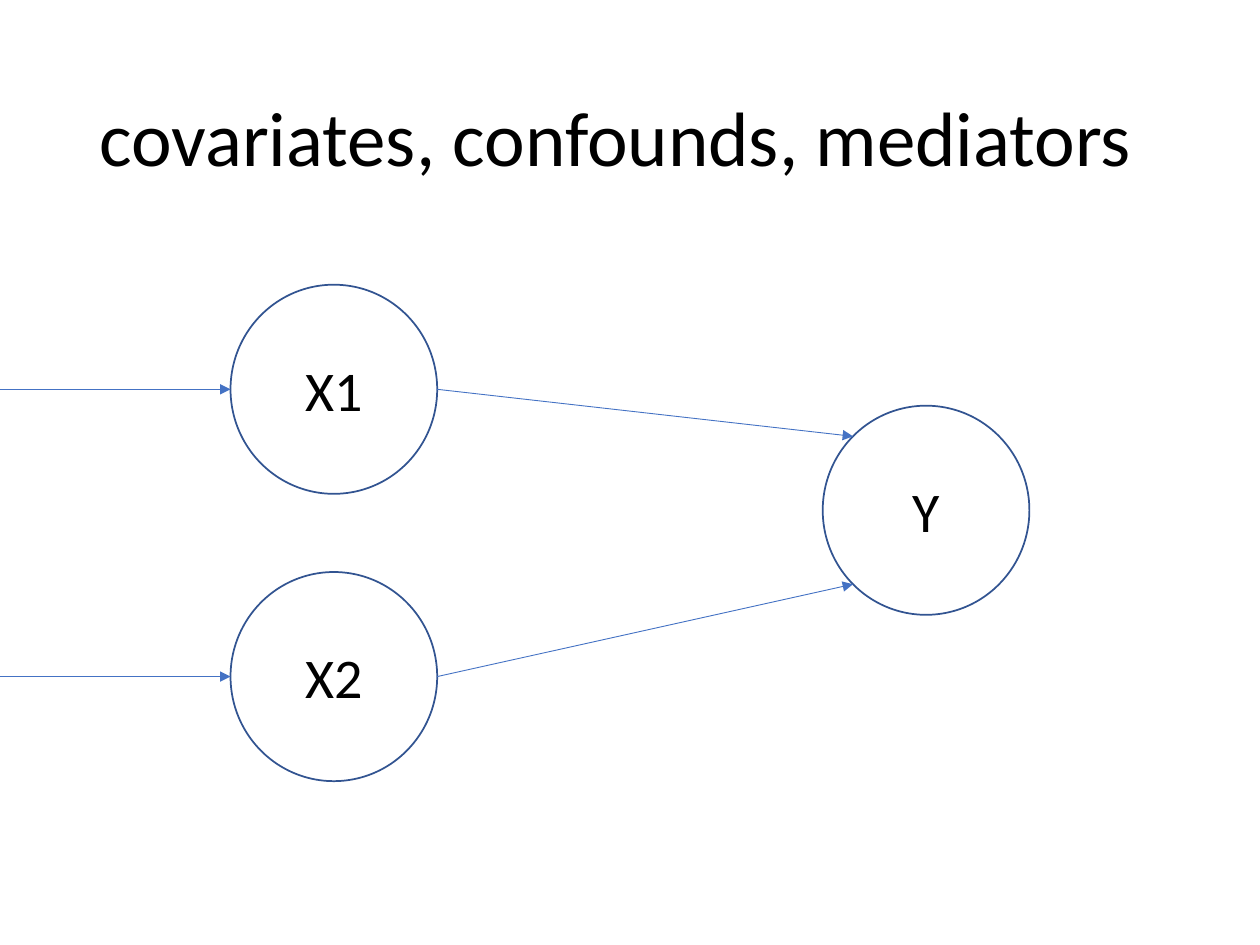
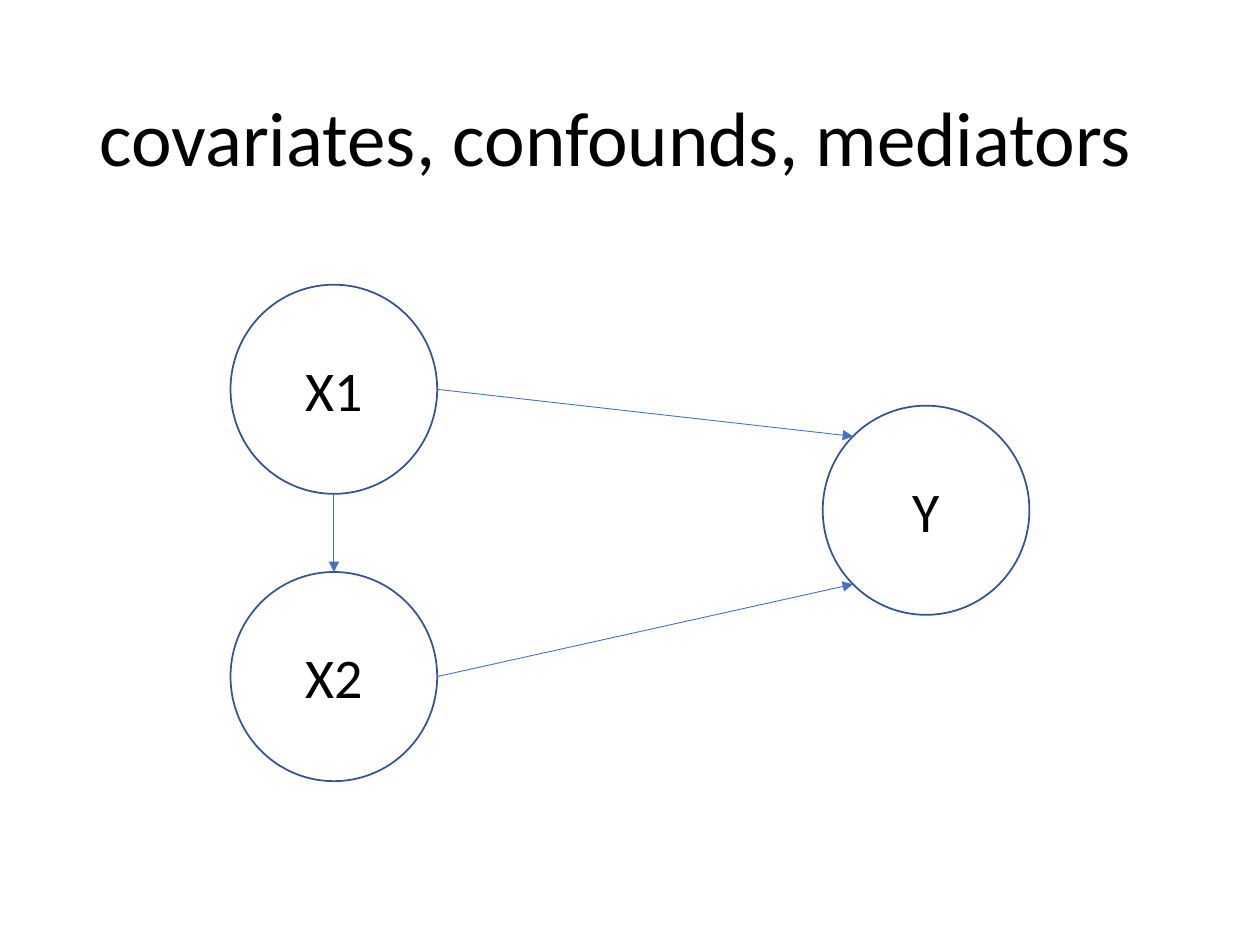
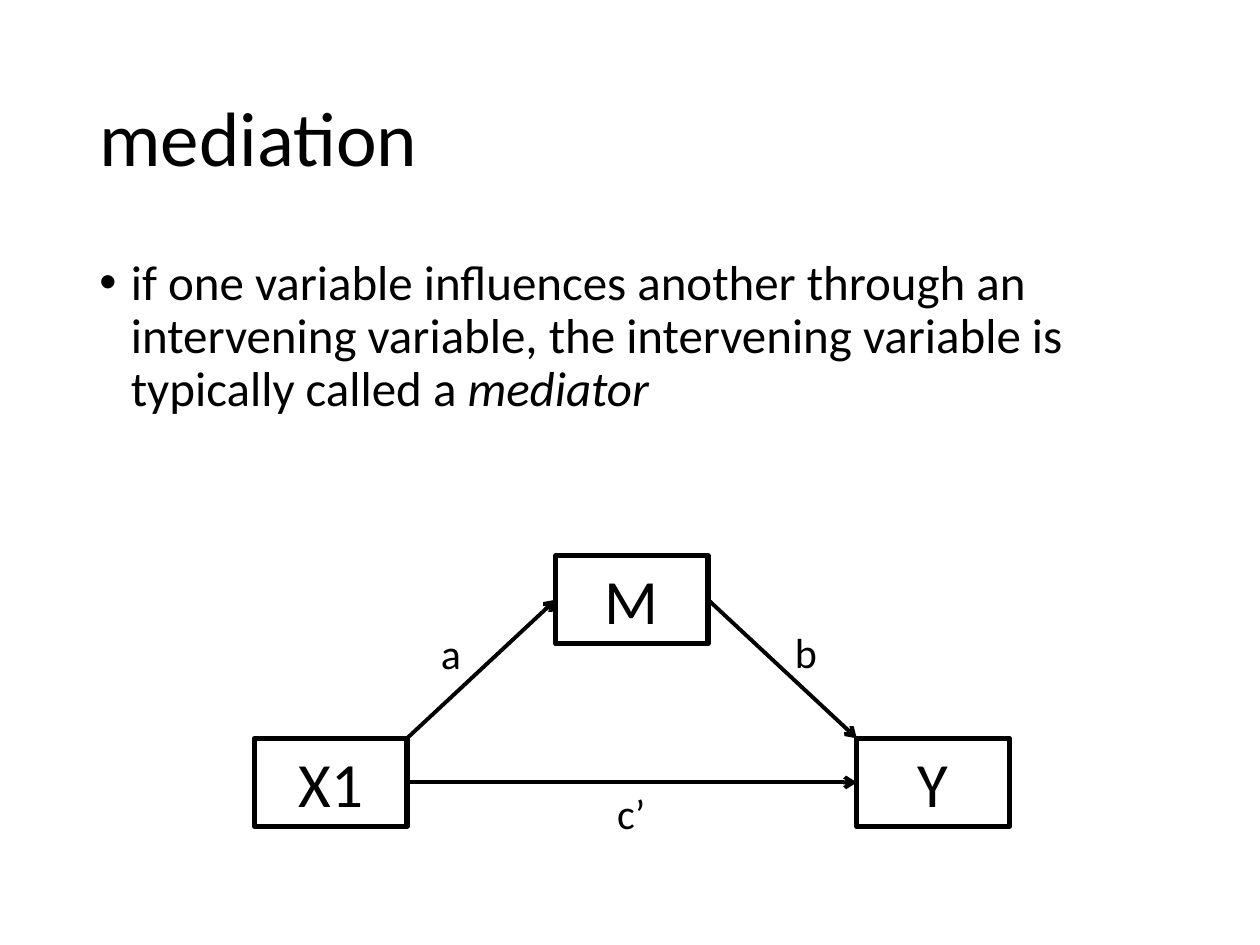
from math import sqrt

from lxml.etree import SubElement
from pptx import Presentation
from pptx.dml.color import RGBColor
from pptx.enum.shapes import MSO_CONNECTOR, MSO_SHAPE
from pptx.enum.text import MSO_ANCHOR, MSO_AUTO_SIZE, PP_ALIGN
from pptx.oxml.ns import qn
from pptx.util import Inches, Pt

FONT = "Calibri"
BLACK, BLUE, DARK_BLUE = "000000", "4472C4", "325491"
MARGIN, CONTENT_W = 0.69, 8.62

# Points on a node, as fractions of its width and height
CORNER = (1 - 1 / sqrt(2)) / 2  # where a diagonal meets an ellipse
LEFT, RIGHT, TOP, BOTTOM = (0, 0.5), (1, 0.5), (0.5, 0), (0.5, 1)
TOP_LEFT, TOP_RIGHT = (0, 0), (1, 0)
ROUND_TOP_LEFT, ROUND_BOTTOM_LEFT = (CORNER, CORNER), (CORNER, 1 - CORNER)


def color(value):
    return RGBColor.from_string(value)


def point(box, site):
    """Position of a site on a box given as left, top, width, height."""
    x, y, w, h = box
    return x + w * site[0], y + h * site[1]


class Deck:
    def __init__(self):
        self.prs = Presentation()
        self.prs.slide_width, self.prs.slide_height = Inches(10), Inches(7.5)
        self.s = None

    def slide(self, title):
        self.s = self.prs.slides.add_slide(self.prs.slide_layouts[6])
        tf = self.text((MARGIN, 0.4, CONTENT_W, 1.45), [title], 44)
        tf.vertical_anchor = MSO_ANCHOR.MIDDLE
        tf.paragraphs[0].line_spacing = 0.9

    def fill_text(self, tf, runs, size):
        p = tf.paragraphs[0]
        for text in runs:
            p.add_run().text = text
        p.font.name, p.font.size = FONT, Pt(size)
        p.font.color.rgb = color(BLACK)
        return p

    def text(self, box, runs, size):
        tf = self.s.shapes.add_textbox(*map(Inches, box)).text_frame
        tf.word_wrap = True
        self.fill_text(tf, runs, size)
        return tf

    def bullet(self, box, plain, emphasis):
        p = self.text(box, [plain, emphasis], 28).paragraphs[0]
        p.runs[1].font.italic = True
        p.line_spacing, p.space_before = 0.9, Pt(10)
        pPr = p._p.get_or_add_pPr()
        pPr.set("marL", str(Inches(0.25)))
        pPr.set("indent", str(-Inches(0.25)))
        bu_font = pPr.makeelement(qn("a:buFont"), {"typeface": "Arial"})
        bu_char = pPr.makeelement(qn("a:buChar"), {"char": "•"})
        at = pPr.index(pPr.find(qn("a:defRPr")))
        pPr[at:at] = [bu_font, bu_char]

    def label(self, box, text):
        tf = self.text(box, [text], 24)
        tf.word_wrap = False
        tf.auto_size = MSO_AUTO_SIZE.SHAPE_TO_FIT_TEXT

    def node(self, kind, box, text, size, line, width):
        sp = self.s.shapes.add_shape(kind, *map(Inches, box))
        sp.shadow.inherit = False
        sp.fill.background()
        sp.line.color.rgb, sp.line.width = color(line), Pt(width)
        tf = sp.text_frame
        tf.vertical_anchor = MSO_ANCHOR.MIDDLE
        self.fill_text(tf, [text], size).alignment = PP_ALIGN.CENTER

    def arrow(self, start, end, line=BLUE, width=0.5, head="triangle"):
        cx = self.s.shapes.add_connector(
            MSO_CONNECTOR.STRAIGHT, *map(Inches, start + end))
        cx.line.color.rgb, cx.line.width = color(line), Pt(width)
        SubElement(cx.line._get_or_add_ln(), qn("a:tailEnd"), type=head)
        SubElement(cx._element.spPr, qn("a:effectLst"))


def circle_slide(deck):
    """Two predictors, X1 and X2, pointing at Y."""
    deck.slide("covariates, confounds, mediators")
    circles = {name: (x, y, 1.64, 1.66) for name, x, y in
               [("X1", 1.83, 2.26), ("X2", 1.83, 4.54), ("Y", 6.53, 3.22)]}
    for name, box in circles.items():
        deck.node(MSO_SHAPE.OVAL, box, name, 32, DARK_BLUE, 1)
    for name, site in [("X1", ROUND_TOP_LEFT), ("X2", ROUND_BOTTOM_LEFT)]:
        deck.arrow(point(circles[name], RIGHT), point(circles["Y"], site))
    return circles


def main():
    deck = Deck()

    # Slide 1: arrows enter both predictors from the slide edge
    circles = circle_slide(deck)
    for name in ("X1", "X2"):
        x, y = point(circles[name], LEFT)
        deck.arrow((0, y), (x, y))

    # Slide 2: X1 acts on X2
    circles = circle_slide(deck)
    deck.arrow(point(circles["X1"], BOTTOM), point(circles["X2"], TOP))

    # Slide 3: mediation triangle
    deck.slide("mediation")
    deck.bullet((MARGIN, 2, CONTENT_W, 1.64),
                "if one variable influences another through an intervening "
                "variable, the intervening variable is typically called a ",
                "mediator")
    boxes = {name: (x, y, 1.21, 0.7) for name, x, y in
             [("X1", 2.02, 5.86), ("Y", 6.8, 5.86), ("M", 4.41, 4.41)]}
    for name, box in boxes.items():
        deck.node(MSO_SHAPE.RECTANGLE, box, name, 36, BLACK, 3)
    for start, site, end, end_site in [("X1", RIGHT, "Y", LEFT),
                                       ("X1", TOP_RIGHT, "M", LEFT),
                                       ("M", RIGHT, "Y", TOP_LEFT)]:
        deck.arrow(point(boxes[start], site), point(boxes[end], end_site),
                   BLACK, 2.25, "arrow")
    for text, x, y, w in [("c’", 4.8, 6.2, 0.43), ("a", 3.4, 4.93, 0.36),
                          ("b", 6.21, 4.92, 0.38)]:
        deck.label((x, y, w, 0.5), text)

    deck.prs.save("out.pptx")


if __name__ == "__main__":
    main()
